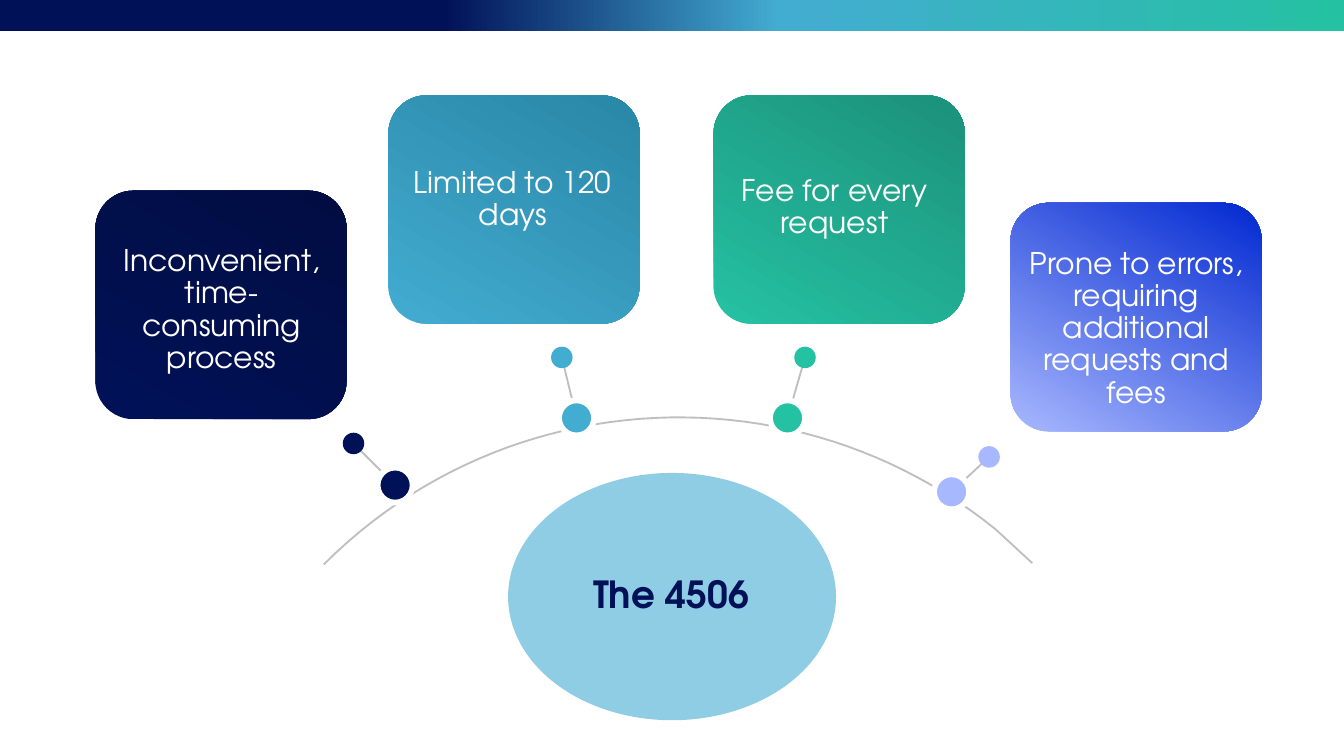
from lxml import etree
from pptx import Presentation
from pptx.dml.color import RGBColor
from pptx.enum import shapes, text
from pptx.oxml.ns import qn
from pptx.util import Pt

NAVY = RGBColor(0x01, 0x11, 0x58)
INK = RGBColor(0x01, 0x0D, 0x42)
BLUE = RGBColor(0x43, 0xAC, 0xD1)
STEEL = RGBColor(0x29, 0x86, 0xA6)
MINT = RGBColor(0x25, 0xC1, 0xA3)
PINE = RGBColor(0x1C, 0x91, 0x7A)
LILAC = RGBColor(0xA8, 0xB8, 0xFE)
ROYAL = RGBColor(0x02, 0x29, 0xD1)
SKY = RGBColor(0x8E, 0xCD, 0xE3)
GREY = RGBColor(0xBF, 0xBF, 0xBF)
WHITE = RGBColor(0xFF, 0xFF, 0xFF)
FONT = "TeX Gyre Adventor"

TITLE = "The 4506"
BAR = [(0, NAVY), (33, NAVY), (58, BLUE), (100, MINT)]
CURVE = [(173.5, 302.4), (272.2, 203.8), (427.7, 198), (533.5, 283.7)]
TAIL = (553, 301.7)
CARD_W, CARD_H = 134.6, 122.4
SMALL, BIG = 11.5, 18.7

CARDS = [
    dict(words="Fee for every request", low=MINT, high=PINE, card=(382.3, 51.1),
         small=(431.3, 191.5), big=(421.9, 223.9), box=(379.4, 90.7, 135.4, 37.4)),
    dict(words="Inconvenient, time-consuming process", low=NAVY, high=INK, card=(51.1, 102.2),
         small=(189.4, 237.6), big=(211.7, 259.9), box=(55.4, 128.2, 126.7, 51.1)),
    dict(words="Limited to 120 days", low=BLUE, high=STEEL, card=(208.1, 51.1),
         small=(301, 191.5), big=(308.9, 223.9), box=(204.5, 86.4, 140.4, 59)),
    dict(words="Prone to errors, requiring additional requests and fees", low=LILAC, high=ROYAL,
         card=(541.4, 108.7), small=(529.9, 244.8), big=(509.8, 263.5),
         box=(535.7, 129.6, 146.2, 70.6)),
]


def pts(*nums):
    return [Pt(n) for n in nums]


def add_form(slide, kind, left, top, width, height, fill=None):
    form = slide.shapes.add_shape(kind, *pts(left, top, width, height))
    form.shadow.inherit = False
    form.line.fill.background()
    if fill is not None:
        form.fill.solid()
        form.fill.fore_color.rgb = fill
    return form


def add_blend(form, stops, angle):
    form.fill.gradient()
    form.fill.gradient_angle = angle
    items = form._element.spPr.find(".//" + qn("a:gsLst"))
    for item in list(items):
        items.remove(item)
    for place, color in stops:
        stop = etree.SubElement(items, qn("a:gs"), pos=str(place * 1000))
        etree.SubElement(stop, qn("a:srgbClr"), val=str(color))


def add_dot(slide, center, size, color):
    x, y = center
    return add_form(slide, shapes.MSO_SHAPE.OVAL, x - size / 2, y - size / 2, size, size, color)


def set_words(frame, words, size, color, bold=False):
    frame.word_wrap = True
    frame.text = words
    para = frame.paragraphs[0]
    para.alignment = text.PP_ALIGN.CENTER
    para.line_spacing = 0.9
    font = para.font
    font.name, font.size, font.bold = FONT, Pt(size), bold
    font.color.rgb = color


def add_curve(slide, steps=48):
    dots = []
    for step in range(steps + 1):
        t = step / steps
        parts = ((1 - t) ** 3, 3 * t * (1 - t) ** 2, 3 * t * t * (1 - t), t ** 3)
        dots.append(pts(*(sum(p * c for p, c in zip(parts, axis)) for axis in zip(*CURVE))))
    dots.append(pts(*TAIL))
    build = slide.shapes.build_freeform(*dots[0])
    build.add_line_segments(dots[1:], close=False)
    curve = build.convert_to_shape()
    curve.shadow.inherit = False
    curve.fill.background()
    curve.line.color.rgb = GREY
    curve.line.width = Pt(1)


def add_card(slide, words, low, high, card, small, big, box):
    stem = slide.shapes.add_connector(shapes.MSO_CONNECTOR.STRAIGHT, *pts(*small, *big))
    stem.line.color.rgb = GREY
    stem.line.width = Pt(1)
    etree.SubElement(stem._element.spPr, qn("a:effectLst"))
    add_dot(slide, small, SMALL, low)
    ring = add_dot(slide, big, BIG, low)
    ring.line.color.rgb = WHITE
    ring.line.width = Pt(3)
    panel = add_form(slide, shapes.MSO_SHAPE.ROUNDED_RECTANGLE, *card, CARD_W, CARD_H)
    add_blend(panel, [(0, low), (100, high)], 60)
    label = slide.shapes.add_textbox(*pts(*box))
    set_words(label.text_frame, words, 16, WHITE)


def main():
    deck = Presentation()
    deck.slide_width, deck.slide_height = pts(720, 405)
    slide = deck.slides.add_slide(deck.slide_layouts[5])
    bar = add_form(slide, shapes.MSO_SHAPE.RECTANGLE, 0, 0, 720, 16.6)
    add_blend(bar, BAR, 0)
    add_curve(slide)
    add_form(slide, shapes.MSO_SHAPE.OVAL, 272.2, 253.4, 175.7, 132.5, SKY)
    title = slide.shapes.title
    title.left, title.top, title.width, title.height = pts(279.4, 291.6, 160.6, 56.2)
    title.text_frame.vertical_anchor = text.MSO_ANCHOR.MIDDLE
    set_words(title.text_frame, TITLE, 20, NAVY, True)
    slide.shapes._spTree.append(title._element)
    for card in CARDS:
        add_card(slide, **card)
    deck.save("out.pptx")


if __name__ == "__main__":
    main()
